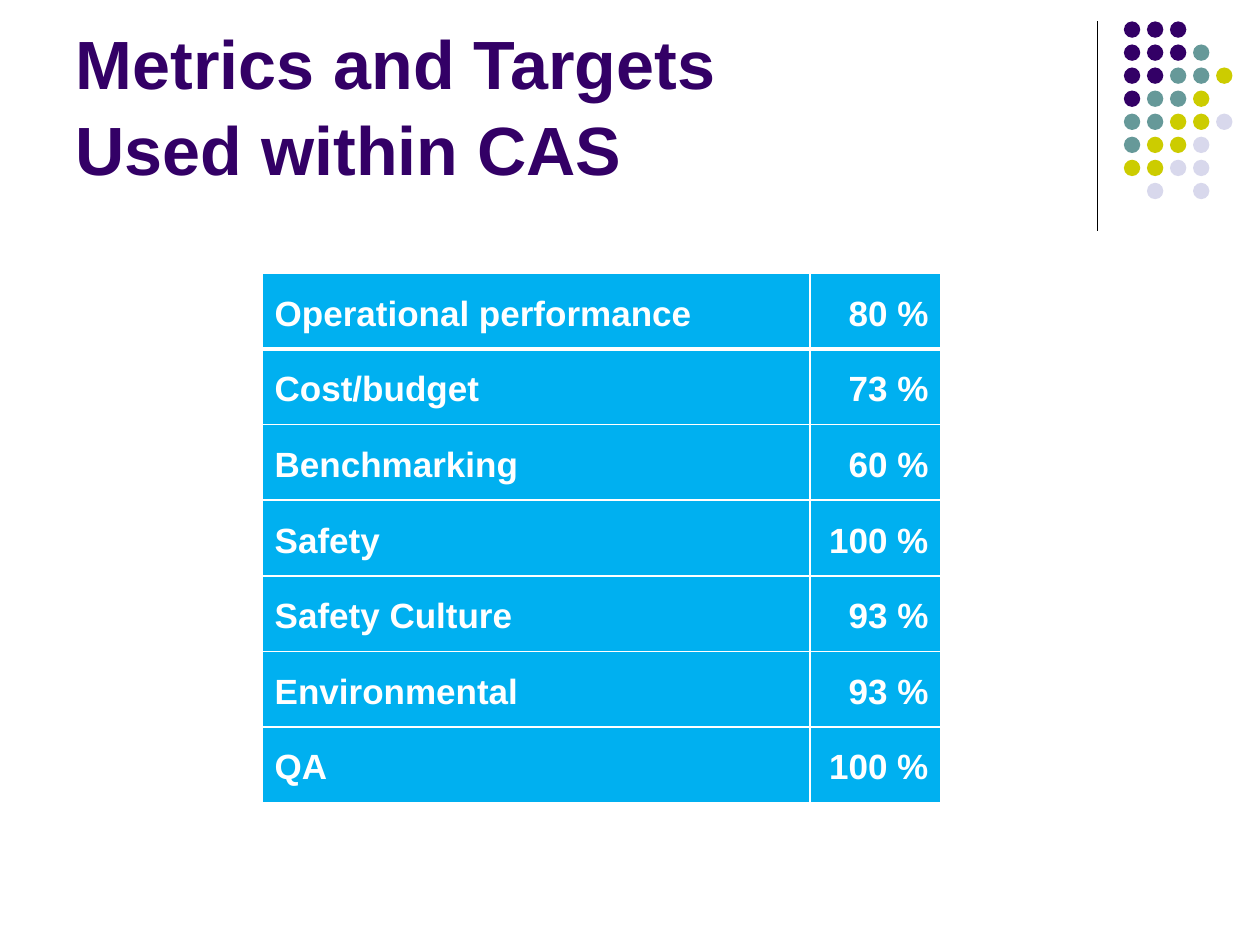
import dataclasses

import lxml.etree
import pptx
import pptx.dml.color
import pptx.enum.shapes
import pptx.enum.text
import pptx.oxml.ns
import pptx.util

ANCHOR = pptx.enum.text.MSO_ANCHOR
ALIGN = pptx.enum.text.PP_ALIGN
qn = pptx.oxml.ns.qn


@dataclasses.dataclass(frozen=True)
class Theme:
    font: str = "Arial"
    purple: str = "330066"
    teal: str = "669999"
    olive: str = "CCCC00"
    lavender: str = "D8D8EC"
    blue: str = "00B0F0"
    white: str = "FFFFFF"
    black: str = "000000"
    title_size: int = 39
    table_size: int = 20


THEME = Theme()

METRICS = [
    ("Operational performance", "80 %"),
    ("Cost/budget", "73 %"),
    ("Benchmarking", "60 %"),
    ("Safety", "100 %"),
    ("Safety Culture", "93 %"),
    ("Environmental", "93 %"),
    ("QA", "100 %"),
]

# One letter per dot: purple, teal, olive, lavender; a dot mark is a gap
DOT_ROWS = ["PPP", "PPPT", "PPTTO", "PTTO", "TTOOL", "TOOL", "OOLL", ".L.L"]
DOT_COLOURS = {"P": THEME.purple, "T": THEME.teal, "O": THEME.olive, "L": THEME.lavender}


def inches(*lengths):
    return [pptx.util.Inches(length) for length in lengths]


def rgb(colour):
    return pptx.dml.color.RGBColor.from_string(colour)


def write_text(frame, text, *, size, colour, align=ALIGN.LEFT, spacing=1.0):
    para = frame.paragraphs[0]
    para.alignment = align
    para.line_spacing = spacing
    span = para.add_run()
    span.text = text
    span.font.name = THEME.font
    span.font.size = pptx.util.Pt(size)
    span.font.bold = True
    span.font.color.rgb = rgb(colour)


def add_title(page, text):
    title = page.shapes.title
    title.left, title.top, title.width, title.height = inches(0.5, 0.13, 6.33, 1.42)
    frame = title.text_frame
    frame.word_wrap = True
    frame.auto_size = pptx.enum.text.MSO_AUTO_SIZE.NONE
    frame.vertical_anchor = ANCHOR.BOTTOM
    write_text(frame, text, size=THEME.title_size, colour=THEME.purple, spacing=1.05)


def add_rule(page, x, top, bottom):
    rule = page.shapes.add_connector(
        pptx.enum.shapes.MSO_CONNECTOR.STRAIGHT, *inches(x, top, x, bottom))
    rule.line.color.rgb = rgb(THEME.black)
    rule.line.width = pptx.util.Pt(0.75)
    lxml.etree.SubElement(rule._element.spPr, qn("a:effectLst"))


def add_dots(page, left, top, pitch, diameter):
    group = page.shapes.add_group_shape()
    for row, letters in enumerate(DOT_ROWS):
        for column, letter in enumerate(letters):
            if letter not in DOT_COLOURS:
                continue
            dot = group.shapes.add_shape(
                pptx.enum.shapes.MSO_SHAPE.OVAL,
                *inches(left + column * pitch, top + row * pitch, diameter, diameter))
            dot.shadow.inherit = False
            dot.fill.solid()
            dot.fill.fore_color.rgb = rgb(DOT_COLOURS[letter])
            dot.line.fill.background()


def set_borders(cell, widths):
    properties = cell._tc.get_or_add_tcPr()
    for index, (side, points) in enumerate(widths.items()):
        line = lxml.etree.Element(qn(f"a:ln{side}"), w=str(pptx.util.Pt(points)))
        fill = lxml.etree.SubElement(line, qn("a:solidFill"))
        lxml.etree.SubElement(fill, qn("a:srgbClr"), val=THEME.white)
        properties.insert(index, line)


def add_metrics_table(page, left, top, column_widths, row_height):
    table = page.shapes.add_table(
        len(METRICS), len(column_widths),
        *inches(left, top, sum(column_widths), row_height * len(METRICS))).table
    for column, width in zip(table.columns, column_widths):
        column.width = pptx.util.Inches(width)
    for row, values in enumerate(METRICS):
        table.rows[row].height = pptx.util.Inches(row_height)
        for column, (value, align) in enumerate(zip(values, (ALIGN.LEFT, ALIGN.RIGHT))):
            cell = table.cell(row, column)
            cell.fill.solid()
            cell.fill.fore_color.rgb = rgb(THEME.blue)
            cell.vertical_anchor = ANCHOR.MIDDLE
            write_text(cell.text_frame, value, size=THEME.table_size,
                       colour=THEME.white, align=align, spacing=1.15)
            # A thick line parts the first row from the rest
            set_borders(cell, {"L": 1, "R": 1, "T": 3 if row == 1 else 1,
                               "B": 3 if row == 0 else 1})


def main():
    deck = pptx.Presentation()
    deck.slide_width, deck.slide_height = inches(10, 7.5)
    page = deck.slides.add_slide(deck.slide_layouts.get_by_name("Title Only"))

    # Corner decoration
    add_rule(page, 8.71, 0.17, 1.83)
    add_dots(page, left=8.92, top=0.17, pitch=0.183, diameter=0.13)

    # Content
    add_title(page, "Metrics and Targets Used within CAS")
    add_metrics_table(page, left=2.08, top=2.17, column_widths=(4.35, 1.04), row_height=0.6)

    deck.save("out.pptx")


if __name__ == "__main__":
    main()
